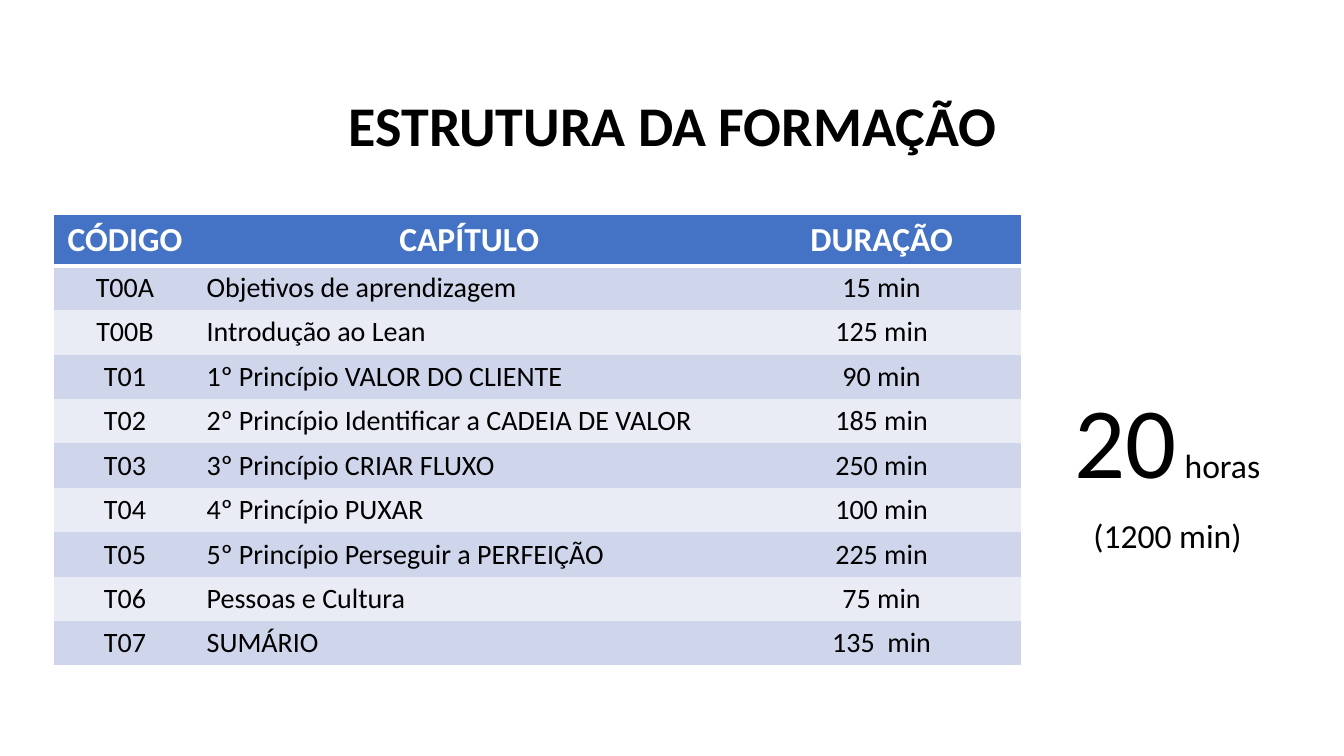
from lxml.etree import SubElement
from pptx import Presentation
from pptx.dml.color import RGBColor
from pptx.enum.text import MSO_ANCHOR, PP_ALIGN
from pptx.oxml.ns import qn
from pptx.util import Inches, Pt

BLACK = RGBColor(0x00, 0x00, 0x00)
WHITE = RGBColor(0xFF, 0xFF, 0xFF)
BLUE = RGBColor(0x44, 0x72, 0xC4)
BAND_DARK = RGBColor(0xCF, 0xD5, 0xEA)
BAND_LIGHT = RGBColor(0xE9, 0xEB, 0xF5)
FONT = "Calibri"

CHAPTERS = [
    ("CÓDIGO", "CAPÍTULO", "DURAÇÃO"),
    ("T00A", "Objetivos de aprendizagem", "15 min"),
    ("T00B", "Introdução ao Lean", "125 min"),
    ("T01", "1º Princípio VALOR DO CLIENTE", "90 min"),
    ("T02", "2º Princípio Identificar a CADEIA DE VALOR", "185 min"),
    ("T03", "3º Princípio CRIAR FLUXO", "250 min"),
    ("T04", "4º Princípio PUXAR", "100 min"),
    ("T05", "5º Princípio Perseguir a PERFEIÇÃO", "225 min"),
    ("T06", "Pessoas e Cultura", "75 min"),
    ("T07", "SUMÁRIO", "135  min"),
]


def style_font(font, size, color=BLACK, bold=False):
    font.name = FONT
    font.size = Pt(size)
    font.bold = bold
    font.color.rgb = color


def set_borders(cell, widths):
    properties = cell._tc.get_or_add_tcPr()
    for index, side in enumerate(("lnL", "lnR", "lnT", "lnB")):
        line = properties.makeelement(qn(f"a:{side}"), {"w": str(Pt(widths.get(side, 0)))})
        if side in widths:
            SubElement(SubElement(line, qn("a:solidFill")), qn("a:srgbClr"), val=str(WHITE))
        else:
            SubElement(line, qn("a:noFill"))
        properties.insert(index, line)


prs = Presentation()
prs.slide_width = Inches(13.33)
prs.slide_height = Inches(7.5)
slide = prs.slides.add_slide(prs.slide_layouts[6])

program = slide.shapes.add_table(
    len(CHAPTERS), 3, Inches(0.53), Inches(2.13), Inches(9.6), Inches(4.46)
).table
for column, width in zip(program.columns, (1.42, 5.41, 2.77)):
    column.width = Inches(width)

last_row = len(CHAPTERS) - 1
for r, chapter in enumerate(CHAPTERS):
    header = r == 0
    program.rows[r].height = Inches(0.5 if header else 0.44)
    for c, text in enumerate(chapter):
        cell = program.cell(r, c)
        cell.text = text
        cell.fill.solid()
        cell.fill.fore_color.rgb = BLUE if header else BAND_DARK if r % 2 else BAND_LIGHT
        paragraph = cell.text_frame.paragraphs[0]
        paragraph.alignment = PP_ALIGN.LEFT if c == 1 and not header else PP_ALIGN.CENTER
        style_font(paragraph.font, 24 if header else 20, WHITE if header else BLACK, header)
        borders = {}
        if c == 0:
            borders["lnL"] = 1
        if c == 2:
            borders["lnR"] = 1
        if header:
            borders.update(lnT=1, lnB=3)
        if r == 1:
            borders["lnT"] = 3
        if r == last_row:
            borders["lnB"] = 1
        set_borders(cell, borders)

heading = slide.shapes.add_textbox(Inches(2.51), Inches(0.85), Inches(8.32), Inches(0.77)).text_frame
heading.word_wrap = True
heading.text = "ESTRUTURA DA FORMAÇÃO"
heading.paragraphs[0].alignment = PP_ALIGN.CENTER
style_font(heading.paragraphs[0].font, 40, bold=True)

total = slide.shapes.add_textbox(Inches(10.35), Inches(3.46), Inches(2.46), Inches(2.19)).text_frame
total.word_wrap = True
total.vertical_anchor = MSO_ANCHOR.TOP
hours = total.paragraphs[0]
for text, size in (("20", 72), (" horas", 24)):
    run = hours.add_run()
    run.text = text
    style_font(run.font, size)
minutes = total.add_paragraph()
minutes.text = "(1200 min)"
minutes.space_before = Pt(6)
style_font(minutes.font, 24)
for paragraph in total.paragraphs:
    paragraph.alignment = PP_ALIGN.CENTER
    paragraph.line_spacing = 1.2

prs.save("out.pptx")
